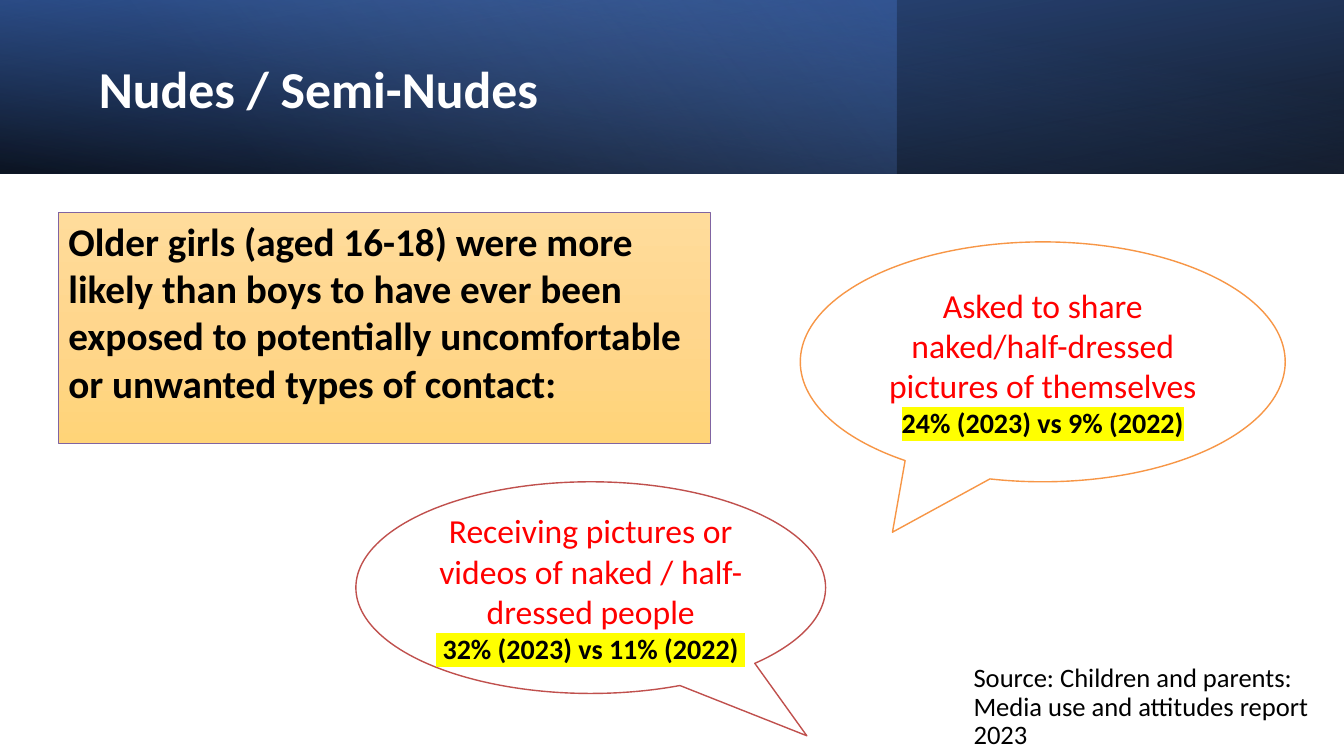
from dataclasses import dataclass

from pptx import Presentation as Deck
from pptx.dml.color import RGBColor as RGB
from pptx.enum.shapes import MSO_SHAPE as Form
from pptx.enum.text import MSO_ANCHOR as Anchor, MSO_AUTO_SIZE as Fit, PP_ALIGN as Align
from pptx.oxml import parse_xml as parse
from pptx.oxml.ns import nsdecls, qn
from pptx.util import Inches, Pt

WHITE = RGB(0xFF, 0xFF, 0xFF)
BLACK = RGB(0x00, 0x00, 0x00)
RED = RGB(0xFF, 0x00, 0x00)
YELLOW = RGB(0xFF, 0xFF, 0x00)
NAVY = RGB(0x2F, 0x54, 0x96)
BLUE = RGB(0x44, 0x72, 0xC4)
PALE = RGB(0x8D, 0xA9, 0xDB)
PURPLE = RGB(0x80, 0x64, 0xA2)
BRICK = RGB(0xC0, 0x50, 0x4D)
ORANGE = RGB(0xF7, 0x96, 0x46)
CREAM = RGB(0xFF, 0xDC, 0x9B)
PEACH = RGB(0xFF, 0xD6, 0x8D)
SAND = RGB(0xFF, 0xD4, 0x78)

FONT = "Calibri"
WIDE, HIGH = Inches(13.33), Inches(7.5)
BAND = 22.93  # height of the header band


@dataclass
class Area:
    """Place and size, in percent of the slide's width and height."""
    left: float
    top: float
    width: float
    height: float

    def lengths(self) -> tuple[int, int, int, int]:
        return (round(self.left * WIDE / 100), round(self.top * HIGH / 100),
                round(self.width * WIDE / 100), round(self.height * HIGH / 100))


@dataclass
class Stop:
    at: int
    color: RGB
    alpha: int = 100


@dataclass
class Layer:
    width: float
    angle: int
    stops: list[Stop]
    flip: bool = False
    turn: int = 0


@dataclass
class Run:
    text: str
    size: int
    color: RGB = BLACK
    bold: bool = False
    mark: RGB | None = None


@dataclass
class Bubble:
    area: Area
    tip: tuple[float, float]
    line: RGB
    paras: list[list[Run]]


LAYERS = [
    Layer(100, 100, [Stop(0, BLACK, 96), Stop(100, NAVY)], flip=True, turn=180),
    Layer(66.67, 140, [Stop(0, BLUE, 41), Stop(74, PALE, 0), Stop(100, PALE, 0)]),
    Layer(100, 260, [Stop(0, BLACK, 63), Stop(78, BLUE, 15), Stop(100, BLUE, 15)], flip=True),
]

BUBBLES = [
    Bubble(Area(26.48, 63.73, 34.95, 28), (0.46, 0.7), BRICK, [
        [Run("Receiving pictures or videos of naked / half-dressed people", 24, RED)],
        [Run(" 32% (2023) vs 11% (2022) ", 20, bold=True, mark=YELLOW)],
    ]),
    Bubble(Area(59.55, 32, 36.08, 31.73), (-0.31, 0.71), ORANGE, [
        [Run("Asked to share naked/half-dressed pictures of themselves ", 24, RED),
         Run("24% (2023) vs 9% (2022)", 20, bold=True, mark=YELLOW)],
    ]),
]


def blend(shape, stops: list[Stop], angle: int) -> None:
    """Fill a shape with a linear gradient."""
    marks = "".join(
        f'<a:gs pos="{s.at * 1000}"><a:srgbClr val="{s.color}">'
        f'<a:alpha val="{s.alpha * 1000}"/></a:srgbClr></a:gs>' for s in stops)
    shape.fill.gradient()
    old = shape.element.spPr.find(qn("a:gradFill"))
    new = parse(f'<a:gradFill {nsdecls("a")} rotWithShape="1"><a:gsLst>{marks}</a:gsLst>'
                f'<a:lin ang="{angle * 60000}" scaled="0"/></a:gradFill>')
    old.getparent().replace(old, new)


def write(frame, paras: list[list[Run]], align=Align.LEFT, anchor=Anchor.MIDDLE,
          space: float = 1.0) -> None:
    """Fill a text frame, run by run."""
    frame.word_wrap = True
    frame.auto_size = Fit.NONE
    frame.vertical_anchor = anchor
    for i, runs in enumerate(paras):
        para = frame.add_paragraph() if i else frame.paragraphs[0]
        para.alignment = align
        para.line_spacing = space
        for item in runs:
            run = para.add_run()
            run.text = item.text
            font = run.font
            font.name, font.size, font.bold = FONT, Pt(item.size), item.bold
            font.color.rgb = item.color
            if item.mark is not None:
                glow = parse(f'<a:highlight {nsdecls("a")}>'
                             f'<a:srgbClr val="{item.mark}"/></a:highlight>')
                run.font.fill  # the highlight follows the text fill
                run._r.rPr.find(qn("a:solidFill")).addnext(glow)


def draw(slide, form, area: Area, line: RGB | None = None, weight: float = 1):
    """Add a preset shape without shadow."""
    shape = slide.shapes.add_shape(form, *area.lengths())
    shape.shadow.inherit = False
    if line is None:
        shape.line.fill.background()
    else:
        shape.line.color.rgb = line
        shape.line.width = Pt(weight)
    return shape


def main() -> None:
    deck = Deck()
    deck.slide_width, deck.slide_height = WIDE, HIGH
    slide = deck.slides.add_slide(deck.slide_layouts[5])

    # Header band
    for layer in LAYERS:
        shape = draw(slide, Form.RECTANGLE, Area(0, 0, layer.width, BAND))
        blend(shape, layer.stops, layer.angle)
        shape.rotation = layer.turn
        if layer.flip:
            shape.element.spPr.xfrm.set("flipH", "1")

    # Title, brought in front of the band
    title = slide.shapes.title
    title.left, title.top, title.width, title.height = Area(6.6, 3.6, 89.4, 16.93).lengths()
    write(title.text_frame, [[Run("Nudes / Semi-Nudes", 37, WHITE, True)]], space=0.9)
    title.element.getparent().append(title.element)

    # Source note
    note = slide.shapes.add_textbox(*Area(71.7, 87.2, 26.55, 12.8).lengths())
    write(note.text_frame, [[Run(
        "Source: Children and parents: Media use and attitudes report 2023", 19)]], space=0.9)

    # Key statement
    panel = draw(slide, Form.RECTANGLE, Area(4.35, 28.13, 48.5, 30.53), PURPLE, 0.75)
    blend(panel, [Stop(0, CREAM), Stop(50, PEACH), Stop(100, SAND)], 90)
    write(panel.text_frame, [[Run(
        "Older girls (aged 16-18) were more likely than boys to have ever been exposed "
        "to potentially uncomfortable or unwanted types of contact:", 28, bold=True)]],
        anchor=Anchor.TOP)

    # Speech bubbles
    for item in BUBBLES:
        bubble = draw(slide, Form.OVAL_CALLOUT, item.area, item.line)
        bubble.fill.solid()
        bubble.fill.fore_color.rgb = WHITE
        for i, value in enumerate(item.tip):
            bubble.adjustments[i] = value
        write(bubble.text_frame, item.paras, Align.CENTER)

    deck.save("out.pptx")


if __name__ == "__main__":
    main()
